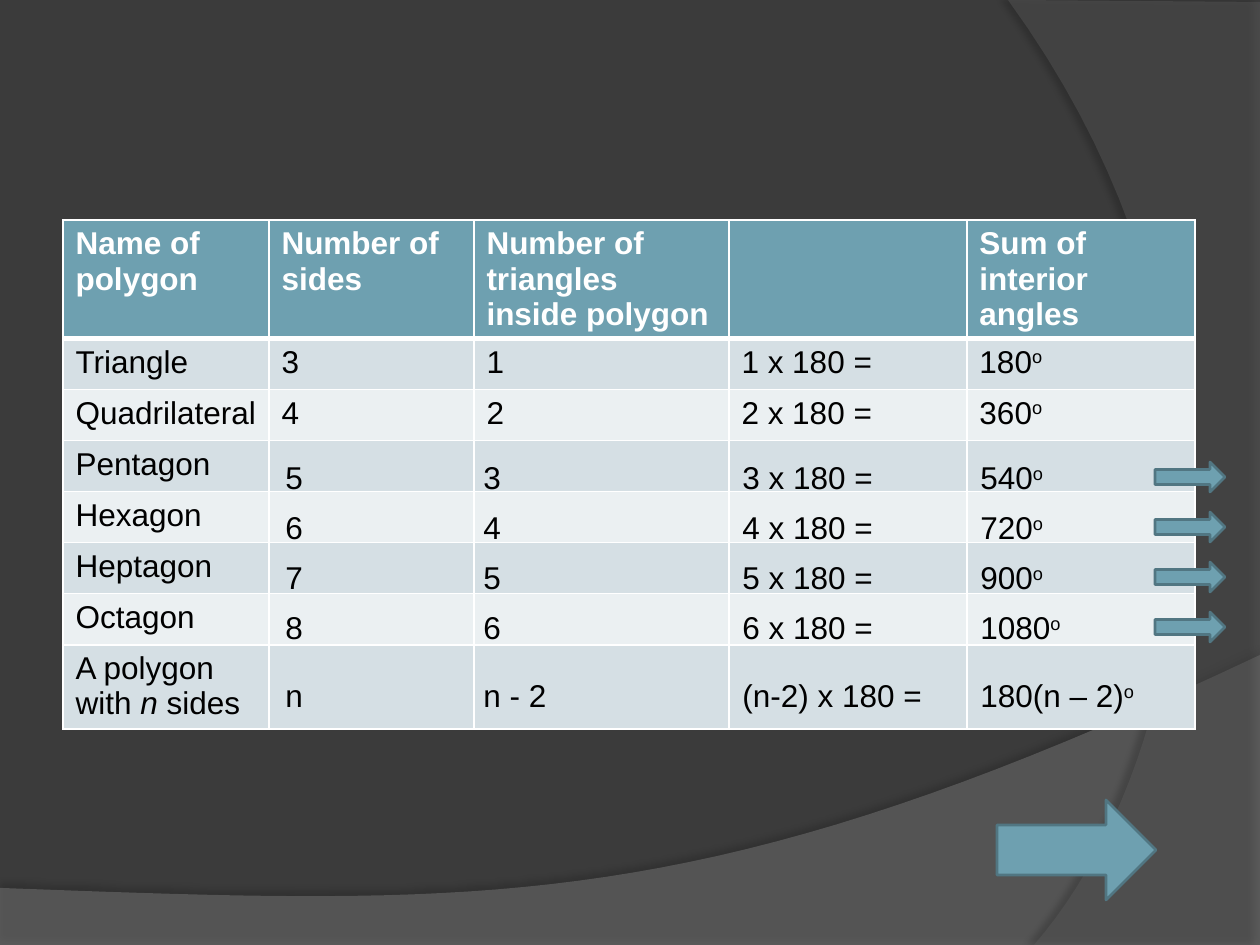
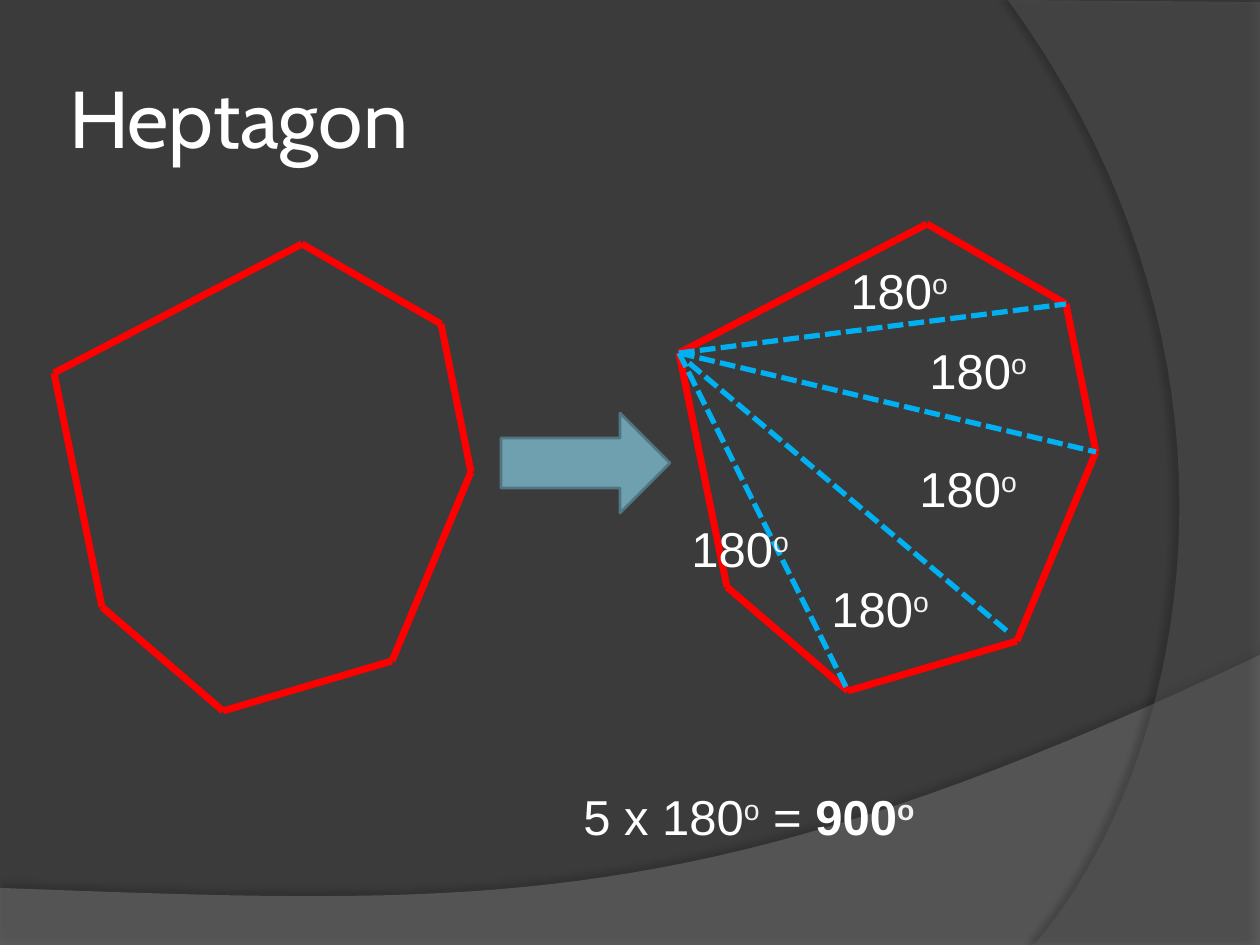
from lxml.etree import SubElement
from pptx import Presentation
from pptx.dml.color import RGBColor
from pptx.enum.dml import MSO_LINE
from pptx.enum.shapes import MSO_CONNECTOR, MSO_SHAPE
from pptx.enum.text import MSO_ANCHOR, MSO_AUTO_SIZE, PP_ALIGN
from pptx.oxml.ns import qn
from pptx.util import Emu, Pt

SCALE = 914400 / 126  # EMU in one px

WHITE = RGBColor(0xFF, 0xFF, 0xFF)
BLACK = RGBColor(0x00, 0x00, 0x00)
PALE = RGBColor(0xF2, 0xF2, 0xF2)
DARK = RGBColor(0x3B, 0x3B, 0x3B)
GREY = RGBColor(0x7F, 0x7F, 0x7F)
SMOKE = RGBColor(0x5E, 0x5E, 0x5E)
TEAL = RGBColor(0x6E, 0xA0, 0xB0)
EDGE = RGBColor(0x51, 0x76, 0x82)
BAND = RGBColor(0xD5, 0xDF, 0xE4)
LIGHT = RGBColor(0xEB, 0xF0, 0xF2)
RED = RGBColor(0xFF, 0x00, 0x00)
SKY = RGBColor(0x00, 0xB0, 0xF0)

SMALL = {"name": "Arial", "size": Pt(18), "color": BLACK}
HEAD = {**SMALL, "color": WHITE, "bold": True}
LARGE = {"name": "Arial", "size": Pt(28), "color": WHITE}
TITLE = {"name": "Cabin", "size": Pt(46), "color": WHITE}
UP = {"base": 30000}
DEG = ("o", UP)
BIG = ("o", {**UP, "color": PALE})

HEADS = ["Name of polygon", "Number of sides",
         "Number of triangles inside polygon", "", "Sum of interior angles"]
NAMES = ["Triangle", "Quadrilateral", "Pentagon", "Hexagon", "Heptagon", "Octagon"]
COLS = [206, 205, 255, 238, 228]
ROWS = [118] + [51] * 6 + [84]
HEPTAGON = [(248, 0), (387, 80), (417, 228), (338, 417),
            (169, 467), (48, 363), (0, 129)]
LABELS = [(159, 30), (238, 110), (228, 228), (140, 348), (0, 288)]


def px(*sizes):
    return [Emu(round(size * SCALE)) for size in sizes]


def write(para, parts, style):
    """Add runs; each part is a string or a (string, extra format) pair."""
    for part in parts:
        text, extra = part if isinstance(part, tuple) else (part, {})
        run = para.add_run()
        run.text = text
        for key, value in {**style, **extra}.items():
            if key == "color":
                run.font.color.rgb = value
            elif key == "base":
                run._r.get_or_add_rPr().set("baseline", str(value))
            else:
                setattr(run.font, key, value)


def add_text(slide, box, parts, style, **frame):
    body = slide.shapes.add_textbox(*px(*box)).text_frame
    fmt = {"word_wrap": True, "auto_size": MSO_AUTO_SIZE.SHAPE_TO_FIT_TEXT, **frame}
    for key, value in fmt.items():
        setattr(body, key, value)
    body.paragraphs[0].alignment = PP_ALIGN.LEFT
    write(body.paragraphs[0], parts, style)


def add_arrow(slide, *box):
    shape = slide.shapes.add_shape(MSO_SHAPE.RIGHT_ARROW, *px(*box))
    shape.shadow.inherit = False
    shape.fill.solid()
    shape.fill.fore_color.rgb = TEAL
    shape.line.color.rgb = EDGE
    shape.line.width = Pt(1.5)


def add_line(slide, start, end, color, width, dash=None):
    line = slide.shapes.add_connector(MSO_CONNECTOR.STRAIGHT, *px(*start, *end))
    line.line.color.rgb = color
    line.line.width = Pt(width)
    if dash:
        line.line.dash_style = dash
    SubElement(line._element.spPr, qn("a:effectLst"))


def shift(points, left, top):
    return [(left + x, top + y) for x, y in points]


def curve(nodes, steps=40):
    """Points along a cubic Bezier with the four given nodes."""
    points = []
    for step in range(steps + 1):
        t = step / steps
        u = 1 - t
        mix = (u ** 3, 3 * u * u * t, 3 * u * t * t, t ** 3)
        points.append(tuple(sum(m * node[axis] for m, node in zip(mix, nodes))
                            for axis in (0, 1)))
    return points


def add_sweep(slide, left, top, points, color, alpha, shade):
    """Draw a see-through outline; shade is shadow alpha, distance, angle."""
    first, *rest = [px(*point) for point in shift(points, left, top)]
    pen = slide.shapes.build_freeform(*first)
    pen.add_line_segments(rest, close=True)
    shape = pen.convert_to_shape()
    shape.line.fill.background()
    shape.fill.solid()
    shape.fill.fore_color.rgb = color
    shape.shadow.inherit = False
    props = shape._element.spPr
    tint = props.find(qn("a:solidFill"))[0]
    SubElement(tint, qn("a:alpha"), val=str(alpha * 1000))
    dark, dist, angle = shade
    outer = SubElement(props.find(qn("a:effectLst")), qn("a:outerShdw"),
                       blurRad=str(Pt(4)), dist=str(Pt(dist)),
                       dir=str(angle * 60000), algn="ctr", rotWithShape="0")
    ink = SubElement(outer, qn("a:srgbClr"), val=str(BLACK))
    SubElement(ink, qn("a:alpha"), val=str(dark * 1000))


def add_base(deck):
    """Start a slide with the shared background and its two sweeps."""
    slide = deck.slides.add_slide(deck.slide_layouts[6])
    slide.background.fill.solid()
    slide.background.fill.fore_color.rgb = DARK
    wave = curve([(1260, 0), (704, 263), (493, 251), (0, 233)])
    add_sweep(slide, 0, 655, [(0, 291), (1260, 291)] + wave, GREY, 45, (35, 3.5, 270))
    arc = curve([(26, 945), (170, 780), (275, 378), (0, 0)])
    add_sweep(slide, 1008, 0, [(252, 2), (252, 945)] + arc, SMOKE, 40, (45, 4, 180))
    return slide


def add_edges(cell, **widths):
    props = cell._tc.get_or_add_tcPr()
    for side in "LRTB":
        edge = SubElement(props, qn("a:ln" + side), w=str(Pt(widths.get(side, 1))))
        fill = SubElement(edge, qn("a:solidFill"))
        SubElement(fill, qn("a:srgbClr"), val=str(WHITE))


def add_grid(slide, left, top):
    box = px(left, top, sum(COLS), sum(ROWS))
    table = slide.shapes.add_table(len(ROWS), len(COLS), *box).table
    for col, width in zip(table.columns, px(*COLS)):
        col.width = width
    for row, height in zip(table.rows, px(*ROWS)):
        row.height = height
    rows = [[[head] for head in HEADS]] + [[[name]] for name in NAMES]
    rows.append([["A polygon with ", ("n", {"italic": True}), " sides"]])
    for count in (1, 2):
        rows[count] += [[str(count + 2)], [str(count)],
                        [f"{count} x 180 ="], [str(count * 180), DEG]]
    for r, parts in enumerate(rows):
        for c in range(len(COLS)):
            cell = table.cell(r, c)
            add_edges(cell, T=3 if r == 1 else 1, B=3 if r == 0 else 1)
            cell.fill.solid()
            cell.fill.fore_color.rgb = TEAL if r == 0 else (LIGHT, BAND)[r % 2]
            if c < len(parts) and parts[c] != [""]:
                write(cell.text_frame.paragraphs[0], parts[c],
                      SMALL if r else HEAD)


def add_answers(slide, left, top):
    """Lay the answers over the lower table rows, with an arrow for each polygon."""
    rows = [(50 * i, [str(i + 5)], [str(i + 3)], [f"{i + 3} x 180 ="],
             [str((i + 3) * 180), DEG]) for i in range(4)]
    rows.append((218, ["n"], ["n - 2"], ["(n-2) x 180 ="], ["180(n – 2)", DEG]))
    for drop, *cells in rows:
        for x, width, parts in zip((0, 198, 457, 695), (79, 112, 218, 228), cells):
            add_text(slide, (left + x, top + drop, width, 50), parts, SMALL)
    for drop, *_ in rows[:4]:
        add_arrow(slide, left + 882, top + drop + 10, 70, 30)


def add_outline(slide, left, top):
    points = shift(HEPTAGON, left, top)
    for start, end in zip(points, points[1:] + points[:1]):
        add_line(slide, start, end, RED, 4)


def add_split(slide, left, top):
    """Draw the heptagon cut into triangles from its left corner."""
    add_outline(slide, left, top)
    points = shift(HEPTAGON, left, top)
    x, y = points[-1]
    for (far, low), trim in zip(points[1:5], (0, 0, 10, 0)):
        add_line(slide, (x + trim, y + trim), (far - trim, low - trim),
                 SKY, 3, MSO_LINE.SQUARE_DOT)
    for spot in shift(LABELS, left, top):
        add_text(slide, (*spot, 129, 72), ["180", BIG], LARGE)


def make_table(deck):
    slide = add_base(deck)
    add_grid(slide, 63, 220)
    add_answers(slide, 273, 452)
    add_arrow(slide, 997, 800, 159, 100)


def make_shape(deck):
    slide = add_base(deck)
    inset = px(6)[0]
    sides = {f"margin_{side}": inset for side in ("left", "top", "right", "bottom")}
    add_text(slide, (63, 38, 1029, 157), ["Heptagon"], TITLE, **sides,
             vertical_anchor=MSO_ANCHOR.MIDDLE, auto_size=MSO_AUTO_SIZE.NONE)
    add_outline(slide, 54, 244)
    add_split(slide, 679, 224)
    bold = {"bold": True}
    add_text(slide, (571, 780, 556, 72),
             ["5 x 180", BIG, " = ", ("900", bold), (BIG[0], {**BIG[1], **bold})], LARGE)
    add_arrow(slide, 501, 413, 169, 100)


def main():
    deck = Presentation()
    deck.slide_width, deck.slide_height = px(1260, 945)
    make_table(deck)
    make_shape(deck)
    deck.save("out.pptx")


if __name__ == "__main__":
    main()
